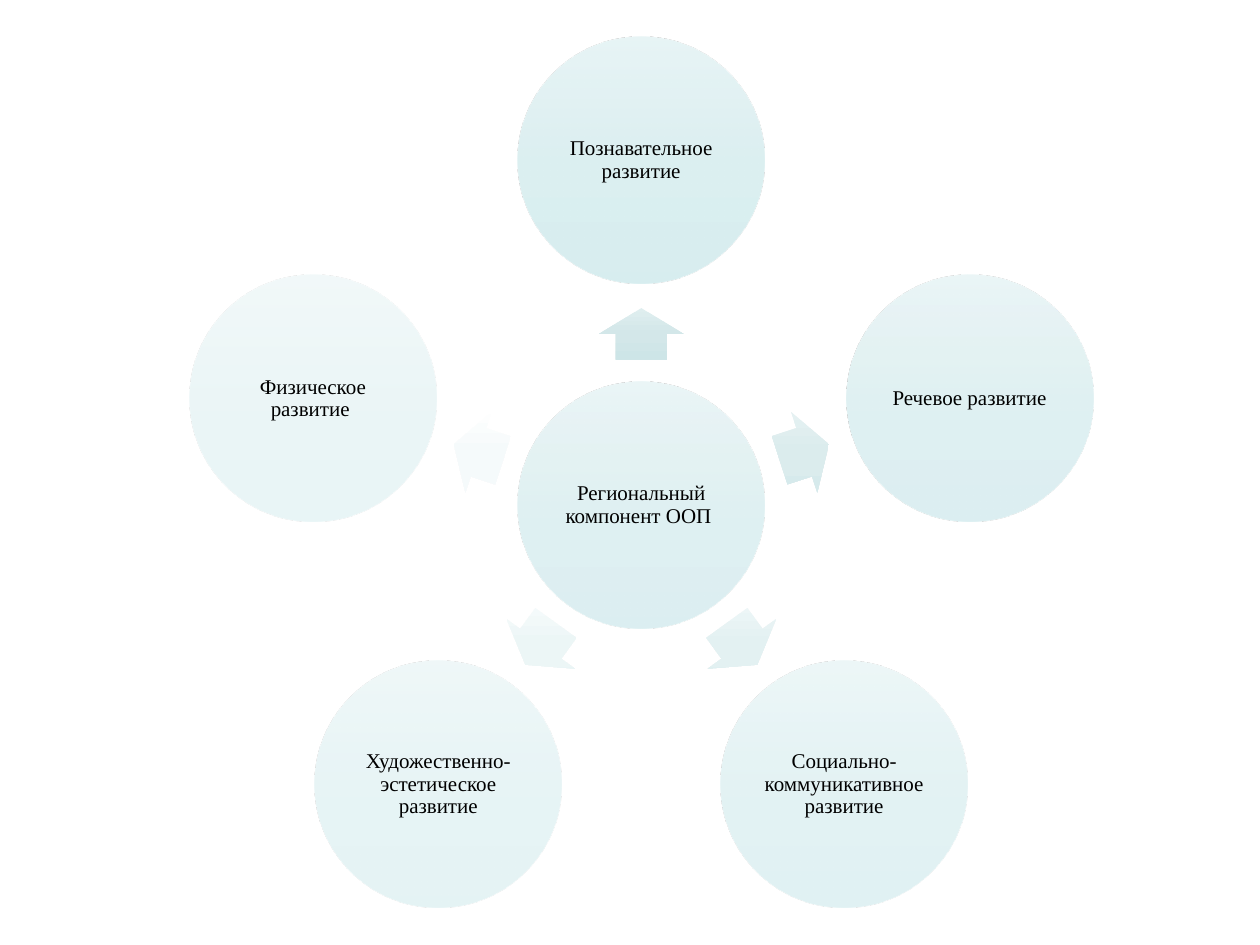
from dataclasses import dataclass
from math import cos, radians, sin

from pptx import Presentation
from pptx.dml.color import RGBColor
from pptx.enum.shapes import MSO_SHAPE
from pptx.enum.text import MSO_ANCHOR, PP_ALIGN
from pptx.oxml import parse_xml
from pptx.oxml.ns import nsdecls
from pptx.util import Inches, Pt

CIRCLE, ARROW = MSO_SHAPE.OVAL, MSO_SHAPE.RIGHT_ARROW
MIDDLE, CENTER = MSO_ANCHOR.MIDDLE, PP_ALIGN.CENTER

HUB = ("Региональный компонент ООП ", 80)
AREAS = [
    ("Познавательное развитие", 90, ("DFEEEF", "D3E7E9", "CDE5E7")),
    ("Речевое развитие", 80, ("E7F2F3", "DBECED", "D6EAEC")),
    ("Социально-коммуникативное развитие", 70, ("EFF7F8", "E3F1F2", "DFF0F1")),
    ("Художественно-эстетическое развитие", 60, ("F7FBFC", "ECF6F6", "E9F5F6")),
    ("Физическое развитие ", 50, ("FFFFFF", "F5FAFB", "F3FAFA")),
]


@dataclass(frozen=True)
class Theme:
    circle: tuple = ("E6F4F5", "D9EEF0", "D4EDEF")
    text: str = "000000"
    font: str = "Times New Roman"
    size: int = 12


THEME = Theme()
SLIDE_W, SLIDE_H = 10, 7.5
HUB_X, HUB_Y = 5.09, 4.01
CIRCLE_SIZE = (1.96, 1.96)
ARROW_SIZE = (0.41, 0.67)
AREA_RADIUS, ARROW_RADIUS = 2.74, 1.36
FRAME_FORMAT = dict(word_wrap=True, vertical_anchor=MIDDLE,
                    **{f"margin_{side}": Inches(0.02)
                       for side in ("left", "right", "top", "bottom")})
PARAGRAPH_FORMAT = dict(alignment=CENTER, line_spacing=0.9)
FONT_FORMAT = dict(name=THEME.font, size=Pt(THEME.size))


def apply_format(target, values):
    for name, value in values.items():
        setattr(target, name, value)


def add_gradient_shape(slide, kind, center, size, colors, opacity=100):
    (x, y), (width, height) = center, size
    shape = slide.shapes.add_shape(kind, Inches(x - width / 2), Inches(y - height / 2),
                                   Inches(width), Inches(height))
    stops = "".join(
        f'<a:gs pos="{i * 50000}"><a:srgbClr val="{color}">'
        f'<a:alpha val="{opacity * 1000}"/></a:srgbClr></a:gs>'
        for i, color in enumerate(colors))
    shape.element.spPr.prstGeom.addnext(parse_xml(
        f'<a:gradFill {nsdecls("a")} rotWithShape="0"><a:gsLst>{stops}</a:gsLst>'
        '<a:lin ang="5400000" scaled="0"/></a:gradFill>'))
    shape.line.fill.background()
    shape.shadow.inherit = False
    return shape


def add_circle(slide, center, label, opacity):
    circle = add_gradient_shape(slide, CIRCLE, center, CIRCLE_SIZE, THEME.circle, opacity)
    frame = circle.text_frame
    apply_format(frame, FRAME_FORMAT)
    paragraph = frame.paragraphs[0]
    apply_format(paragraph, PARAGRAPH_FORMAT)
    run = paragraph.add_run()
    run.text = label
    apply_format(run.font, FONT_FORMAT)
    run.font.color.rgb = RGBColor.from_string(THEME.text)


def around_hub(radius, angle):
    return (HUB_X + radius * cos(radians(angle)), HUB_Y + radius * sin(radians(angle)))


def main():
    deck = Presentation()
    deck.slide_width, deck.slide_height = Inches(SLIDE_W), Inches(SLIDE_H)
    slide = deck.slides.add_slide(deck.slide_layouts[6])

    add_circle(slide, (HUB_X, HUB_Y), *HUB)
    for i, (label, opacity, arrow_colors) in enumerate(AREAS):
        angle = (270 + i * 360 / len(AREAS)) % 360
        arrow = add_gradient_shape(slide, ARROW, around_hub(ARROW_RADIUS, angle),
                                   ARROW_SIZE, arrow_colors)
        arrow.rotation = angle
        arrow.adjustments[0], arrow.adjustments[1] = 0.6, 0.5
        add_circle(slide, around_hub(AREA_RADIUS, angle), label, opacity)

    deck.save("out.pptx")


if __name__ == "__main__":
    main()
